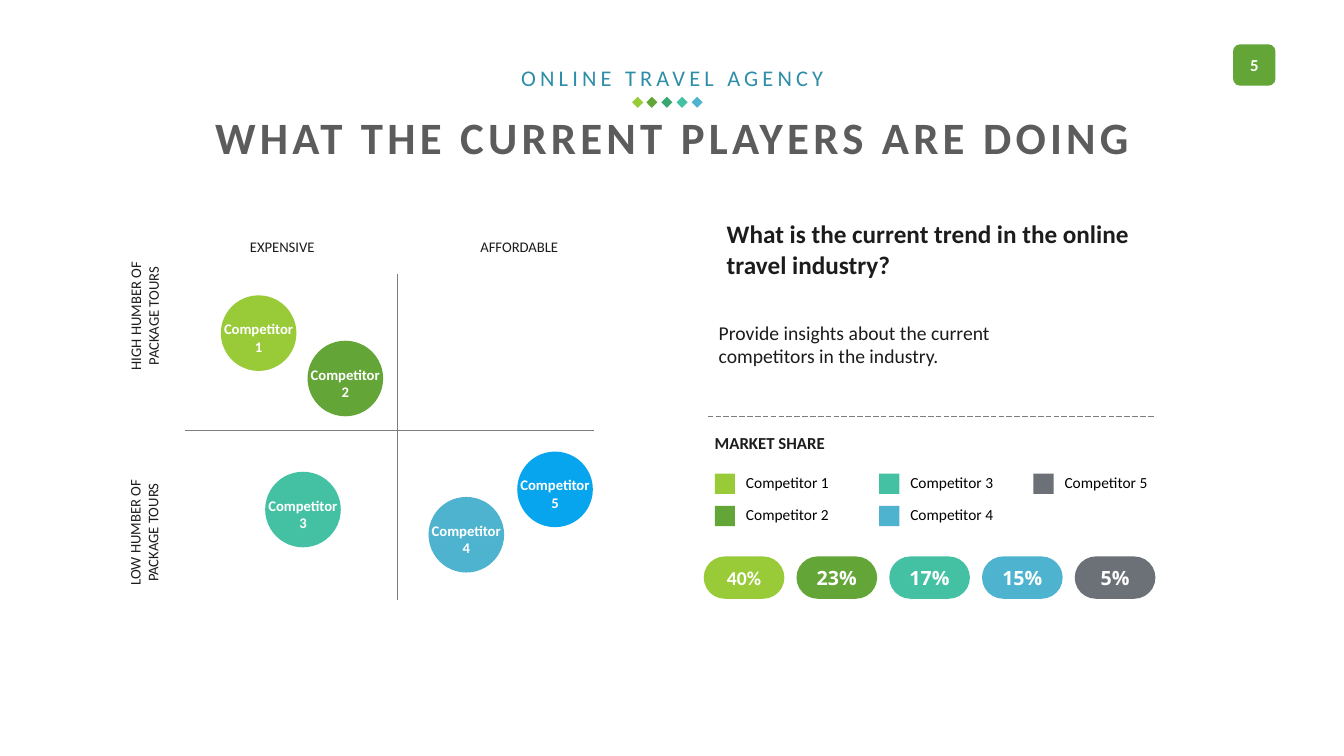
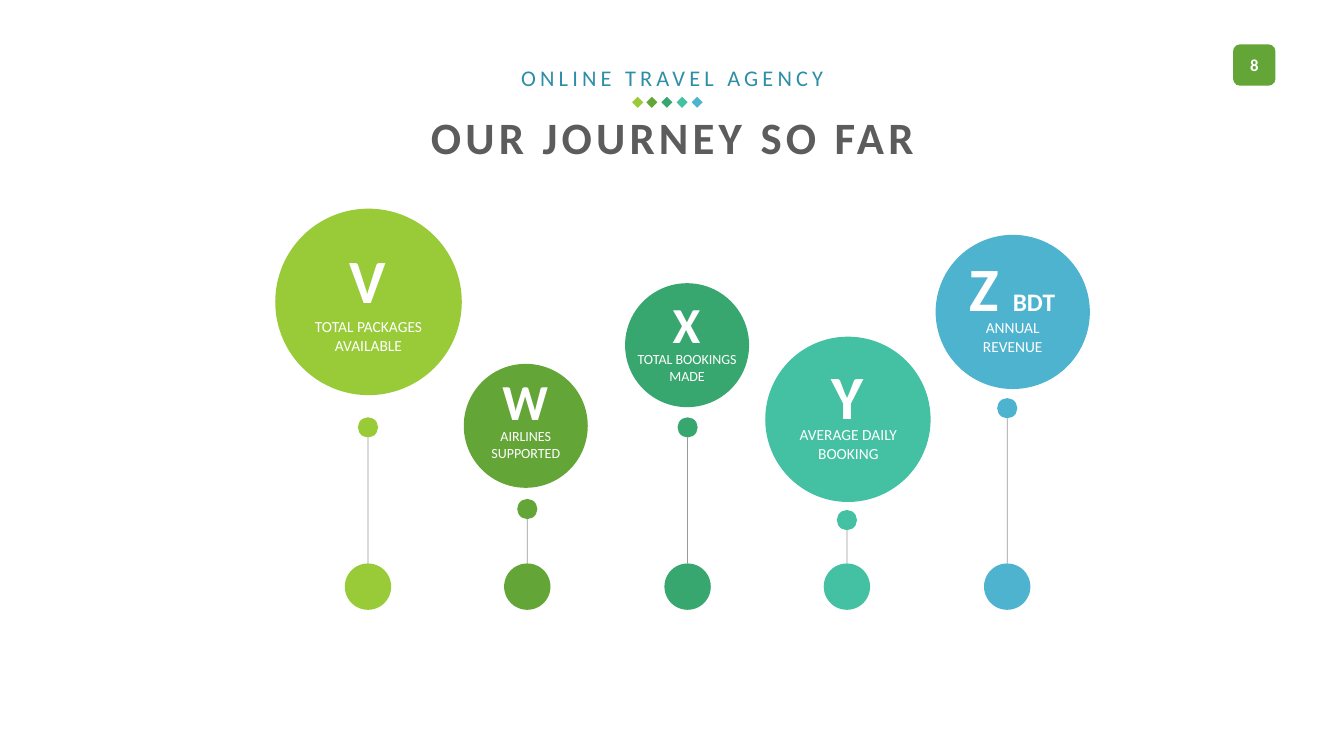
"""Build two slides of a travel agency deck: competitor overview and journey."""
from lxml import etree
from pptx import Presentation
from pptx.dml.color import RGBColor
from pptx.enum.dml import MSO_LINE
from pptx.enum.shapes import MSO_CONNECTOR, MSO_SHAPE
from pptx.enum.text import MSO_ANCHOR, MSO_AUTO_SIZE, PP_ALIGN
from pptx.oxml.ns import qn
from pptx.util import Emu, Pt

PX = 9144
LIME = RGBColor(0x99, 0xCB, 0x38)
GREEN = RGBColor(0x63, 0xA5, 0x37)
EMERALD = RGBColor(0x37, 0xA7, 0x6F)
TEAL = RGBColor(0x44, 0xC1, 0xA3)
SKY = RGBColor(0x4E, 0xB3, 0xCF)
AZURE = RGBColor(0x08, 0xA5, 0xEF)
SLATE = RGBColor(0x6B, 0x71, 0x76)
OCEAN = RGBColor(0x2E, 0x8E, 0xA8)
TITLE_GREY = RGBColor(0x5C, 0x5C, 0x5C)
LINE_GREY = RGBColor(0x7D, 0x7D, 0x7D)
INK = RGBColor(0x1C, 0x1C, 0x1C)
BLACK = RGBColor(0, 0, 0)
WHITE = RGBColor(0xFF, 0xFF, 0xFF)
ACCENTS = [LIME, GREEN, EMERALD, TEAL, SKY]

OVAL, RECTANGLE, ROUNDED, DIAMOND = (
    MSO_SHAPE.OVAL, MSO_SHAPE.RECTANGLE, MSO_SHAPE.ROUNDED_RECTANGLE, MSO_SHAPE.DIAMOND)
STRAIGHT = MSO_CONNECTOR.STRAIGHT
LEFT, CENTER = PP_ALIGN.LEFT, PP_ALIGN.CENTER
TOP, MIDDLE = MSO_ANCHOR.TOP, MSO_ANCHOR.MIDDLE


def add_box(slide, left, top, width, height, kind=None, color=None):
    """Add a wrapping text box, or a filled shape when a kind is given."""
    box = [Emu(length * PX) for length in (left, top, width, height)]
    if kind is None:
        shape = slide.shapes.add_textbox(*box)
        shape.text_frame.word_wrap = True
        return shape
    shape = slide.shapes.add_shape(kind, *box)
    shape.shadow.inherit = False
    shape.fill.solid()
    shape.fill.fore_color.rgb = color
    shape.line.fill.background()
    frame = shape.text_frame
    frame.word_wrap = False
    frame.vertical_anchor = MIDDLE
    frame.margin_left = frame.margin_right = frame.margin_top = frame.margin_bottom = 0
    return shape


def add_text(shape, text, size, color, bold=False, align=CENTER, spacing=0, font="Calibri"):
    """Write one paragraph into the shape and return it."""
    frame = shape.text_frame
    paragraph = frame.add_paragraph() if frame.text else frame.paragraphs[0]
    paragraph.alignment = align
    run = paragraph.add_run()
    run.text = text
    run.font.name = font
    run.font.size = Pt(size)
    run.font.bold = bold
    run.font.color.rgb = color
    if spacing:
        run._r.get_or_add_rPr().set("spc", str(spacing * 100))
    return paragraph


presentation = Presentation()
presentation.slide_width = Emu(1333 * PX)
presentation.slide_height = Emu(750 * PX)
title_layout = presentation.slide_layouts[5]

slides = []
for title_text, number in [("WHAT THE CURRENT PLAYERS ARE DOING", "5"),
                           ("OUR JOURNEY SO FAR", "8")]:
    slide = presentation.slides.add_slide(title_layout)
    slides.append(slide)
    badge = add_box(slide, 1223, 44, 42, 41, ROUNDED, GREEN)
    add_text(badge, number, 12, WHITE, bold=True)
    title = slide.shapes.title
    title.left, title.top = Emu(167 * PX), Emu(104 * PX)
    title.width, title.height = Emu(1000 * PX), Emu(64 * PX)
    title.text_frame.auto_size = MSO_AUTO_SIZE.NONE
    title.text_frame.vertical_anchor = TOP
    add_text(title, title_text, 32, TITLE_GREY, bold=True, spacing=3)
    for index, color in enumerate(ACCENTS):
        add_box(slide, 627 + 59 * index // 4, 96, 11, 11, DIAMOND, color)
    eyebrow = add_box(slide, 467, 59, 400, 37)
    add_text(eyebrow, "ONLINE TRAVEL AGENCY", 16, OCEAN, spacing=3)

players, journey = slides
lines = []

for x1, y1, x2, y2, dash in [(394, 272, 394, 595, None), (184, 427, 589, 427, None),
                             (702, 413, 1146, 413, MSO_LINE.LONG_DASH)]:
    connector = players.shapes.add_connector(
        STRAIGHT, Emu(x1 * PX), Emu(y1 * PX), Emu(x2 * PX), Emu(y2 * PX))
    lines.append((connector, LINE_GREY, dash, None))

for text, left, top, width, height, rotation in [
        ("EXPENSIVE", 213, 231, 134, 28, 0),
        ("AFFORDABLE", 444, 231, 142, 28, 0),
        ("HIGH HUMBER OF PACKAGE TOURS", 76, 291, 134, 45, 270),
        ("LOW HUMBER OF PACKAGE TOURS", 65, 506, 155, 45, 270)]:
    axis_label = add_box(players, left, top, width, height)
    axis_label.rotation = rotation
    add_text(axis_label, text, 10.5, INK)

for number, (left, top, color) in enumerate([
        (219, 293, LIME), (305, 338, GREEN), (263, 468, TEAL),
        (425, 493, SKY), (513, 448, AZURE)], start=1):
    competitor = add_box(players, left, top, 75, 75, OVAL, color)
    competitor.text_frame.margin_top = Emu(9 * PX)
    add_text(competitor, "Competitor", 10.5, WHITE, bold=True)
    add_text(competitor, str(number), 10.5, WHITE, bold=True)

for text, left, top, width, height, size, bold in [
        ("What is the current trend in the online travel industry?", 711, 212, 440, 71, 18, True),
        ("Provide insights about the current competitors in the industry.",
         703, 313, 369, 57, 14, False),
        ("MARKET SHARE", 699, 424, 381, 30, 12, True)]:
    add_text(add_box(players, left, top, width, height), text, size, INK, bold, LEFT)

legend_columns = [709, 872, 1025]
for index, (share, color, font) in enumerate([
        ("40%", LIME, "Calibri"), ("23%", GREEN, "Open Sans"), ("17%", TEAL, "Open Sans"),
        ("15%", SKY, "Open Sans"), ("5%", SLATE, "Open Sans")]):
    column, row = divmod(index, 2)
    left = legend_columns[column]
    add_box(players, left, 470 + 32 * row, 20, 20, RECTANGLE, color)
    label = add_box(players, left + 21, 464 + 32 * row, 140, 29)
    add_text(label, f"Competitor {index + 1}", 11, BLACK, align=LEFT)
    pill = add_box(players, 698 + 92 * index, 552, 80, 42, ROUNDED, color)
    pill.adjustments[0] = 0.5
    add_text(pill, share, 14, WHITE, bold=True, font=font)

for index, (color, dot_top, left, top, diameter, letter, letter_top, caption, caption_top) in enumerate([
        (LIME, 414, 273, 207, 185, "V", 235, "TOTAL PACKAGES AVAILABLE", 310),
        (GREEN, 495, 460, 361, 123, "W", 362, "AIRLINES SUPPORTED", 419),
        (EMERALD, 414, 620, 281, 123, "X", 286, "TOTAL BOOKINGS MADE", 343),
        (TEAL, 506, 759, 334, 164, "Y", 350, "AVERAGE DAILY BOOKING", 417),
        (SKY, 395, 928, 233, 153, "Z", 243, "ANNUAL REVENUE", 311)]):
    stem = 365 + 317 * index // 2
    connector = journey.shapes.add_connector(
        STRAIGHT, Emu(stem * PX), Emu(559 * PX), Emu(stem * PX), Emu((dot_top + 20) * PX))
    lines.append((connector, BLACK, None, 40))
    add_box(journey, stem - 23, 559, 46, 46, OVAL, color)
    add_box(journey, stem - 10, dot_top, 20, 20, OVAL, color)
    add_box(journey, left, top, diameter, diameter, OVAL, color)
    center = left + diameter // 2
    letter_size, caption_size = (44, 11) if diameter > 150 else (36, 10)
    letter_box = add_box(journey, center - 60, letter_top, 120, 84)
    paragraph = add_text(letter_box, letter, letter_size, WHITE, bold=True)
    if letter == "Z":
        paragraph.runs[0].text = "Z "
        add_run = paragraph.add_run()
        add_run.text = "BDT"
        add_run.font.name = "Calibri"
        add_run.font.size = Pt(18)
        add_run.font.bold = True
        add_run.font.color.rgb = WHITE
    caption_box = add_box(journey, center - 66, caption_top, 133, 47)
    add_text(caption_box, caption, caption_size, WHITE)

for connector, color, dash, opacity in lines:
    connector.line.width = Pt(0.5)
    connector.line.color.rgb = color
    if dash:
        connector.line.dash_style = dash
    properties = connector._element.spPr
    if opacity:
        color_element = properties.find(".//" + qn("a:srgbClr"))
        etree.SubElement(color_element, qn("a:alpha"), val=str(opacity * 1000))
    etree.SubElement(properties, qn("a:effectLst"))

presentation.save("out.pptx")
